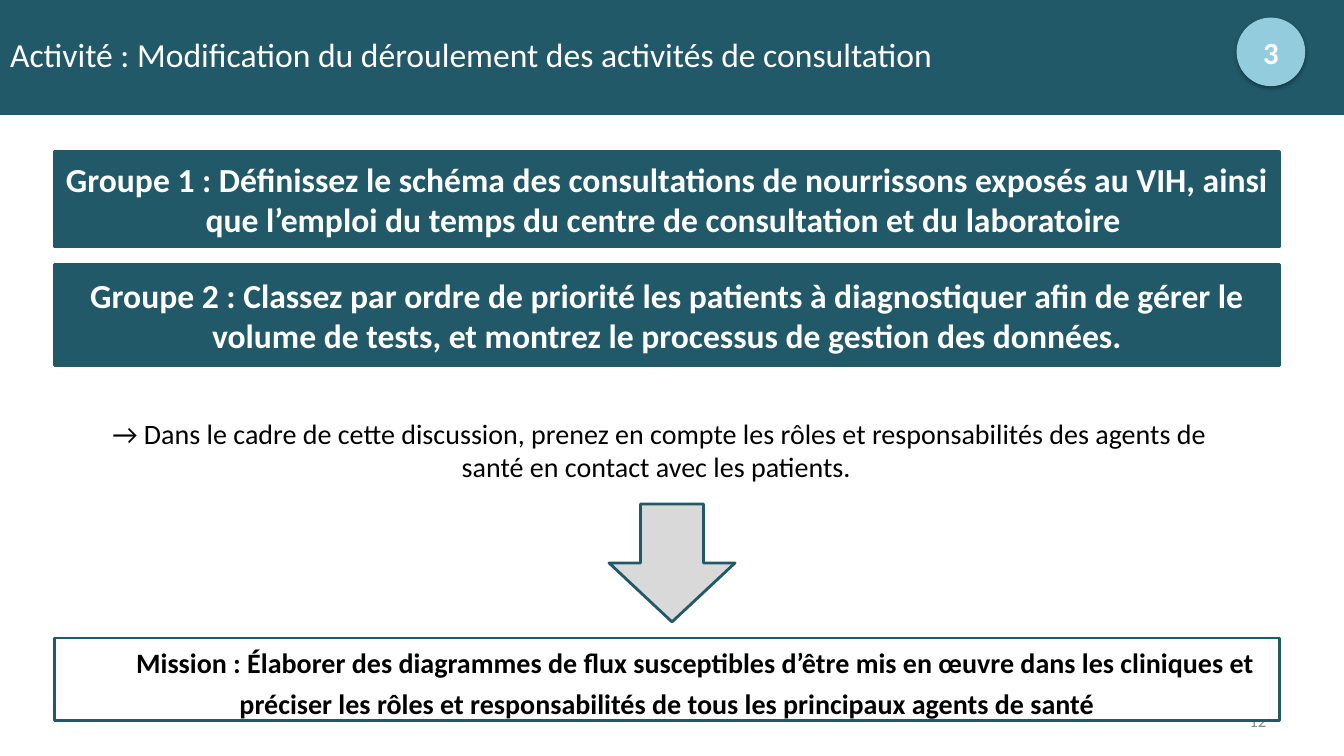
"""Build the consultation workflow activity slide."""
from typing import NamedTuple, Optional

from lxml import etree
from pptx import Presentation
from pptx import util as u
from pptx.dml.color import RGBColor
from pptx.enum import shapes, text
from pptx.oxml import ns

TEAL, SKY, GREY, WHITE, BLACK = "215968", "93CDDD", "D9D9D9", "FFFFFF", "000000"
SHAPE, ALIGN, ANCHOR = shapes.MSO_SHAPE, text.PP_ALIGN, text.MSO_ANCHOR


class Block(NamedTuple):
    left: float
    top: float
    width: float
    height: float
    fill: str
    line: Optional[str] = None
    line_width: float = 2
    kind: int = SHAPE.RECTANGLE
    words: str = ""
    size: float = 24
    color: str = WHITE
    bold: bool = True
    anchor: int = ANCHOR.MIDDLE


def paint(target, color: str) -> None:
    target.rgb = RGBColor.from_string(color)


def write(box, words: str, size: float, color: str, bold: bool = False,
          align: int = ALIGN.CENTER, anchor: int = ANCHOR.MIDDLE) -> None:
    frame = box.text_frame
    frame.text = words
    frame.word_wrap = True
    frame.auto_size = text.MSO_AUTO_SIZE.NONE
    frame.vertical_anchor = anchor
    para = frame.paragraphs[0]
    para.alignment = align
    for span in para.runs:
        span.font.name = "Calibri"
        span.font.size = u.Pt(size)
        span.font.bold = bold
        paint(span.font.color, color)


def draw(page, block: Block):
    box = page.shapes.add_shape(block.kind, u.Inches(block.left), u.Inches(block.top),
                                u.Inches(block.width), u.Inches(block.height))
    box.shadow.inherit = False
    box.fill.solid()
    paint(box.fill.fore_color, block.fill)
    if block.line:
        paint(box.line.color, block.line)
        box.line.width = u.Pt(block.line_width)
    else:
        box.line.fill.background()
    if block.words:
        write(box, block.words, block.size, block.color, block.bold, anchor=block.anchor)
    return box


def cast_shadow(box) -> None:
    effects = box.element.spPr.find(ns.qn("a:effectLst"))
    shadow = etree.SubElement(effects, ns.qn("a:outerShdw"), blurRad=str(u.Pt(3.1)),
                              dist=str(u.Pt(1.8)), dir="5400000", rotWithShape="0")
    tint = etree.SubElement(shadow, ns.qn("a:srgbClr"), val=BLACK)
    etree.SubElement(tint, ns.qn("a:alpha"), val="35000")


BANNER = Block(0, -0.03, 13.33, 1.17, TEAL)
BADGE = Block(12.27, 0.18, 0.67, 0.67, SKY, SKY, 0.75, SHAPE.OVAL, "3", 22)
MISSION = Block(0.54, 6.33, 12.15, 0.82, WHITE, TEAL, size=20, color=BLACK,
                words="Mission : Élaborer des diagrammes de flux susceptibles d’être mis en œuvre "
                      "dans les cliniques et préciser les rôles et responsabilités de tous les "
                      "principaux agents de santé")
BODY = [
    Block(0.82, 4.08, 11.44, 0.75, WHITE, size=20, color=BLACK, bold=False, anchor=ANCHOR.TOP,
          words="→ Dans le cadre de cette discussion, prenez en compte les rôles et "
                "responsabilités des agents de santé en contact avec les patients. "),
    Block(0.54, 1.5, 12.15, 0.95, TEAL, TEAL,
          words="Groupe 1 : Définissez le schéma des consultations de nourrissons exposés au "
                "VIH, ainsi que l’emploi du temps du centre de consultation et du laboratoire "),
    Block(0.54, 2.62, 12.15, 1.01, TEAL, TEAL,
          words="Groupe 2 : Classez par ordre de priorité les patients à diagnostiquer afin de "
                "gérer le volume de tests, et montrez le processus de gestion des données."),
    Block(6.04, 5, 1.25, 1.17, GREY, TEAL, kind=SHAPE.DOWN_ARROW),
]


def main() -> None:
    deck = Presentation()
    deck.slide_width, deck.slide_height = u.Inches(13.33), u.Inches(7.5)
    page = deck.slides.add_slide(deck.slide_layouts[5])

    banner = draw(page, BANNER)
    number = page.shapes.add_textbox(u.Inches(9.55), u.Inches(6.95), u.Inches(3.11), u.Inches(0.4))
    write(number, "12", 12, "8C8C8C", align=ALIGN.RIGHT)

    title = page.shapes.title
    banner.element.addnext(title.element)
    title.left, title.top = u.Inches(0), u.Inches(0)
    title.width, title.height = u.Inches(13.29), u.Inches(1.08)
    write(title, "Activité : Modification du déroulement des activités de consultation",
          24, WHITE, align=ALIGN.LEFT)

    cast_shadow(draw(page, BADGE))
    for block in BODY:
        draw(page, block)

    para = draw(page, MISSION).text_frame.paragraphs[0]
    para.line_spacing = 1.2
    para._p.get_or_add_pPr().set("indent", str(u.Inches(0.56)))

    deck.save("out.pptx")


if __name__ == "__main__":
    main()
